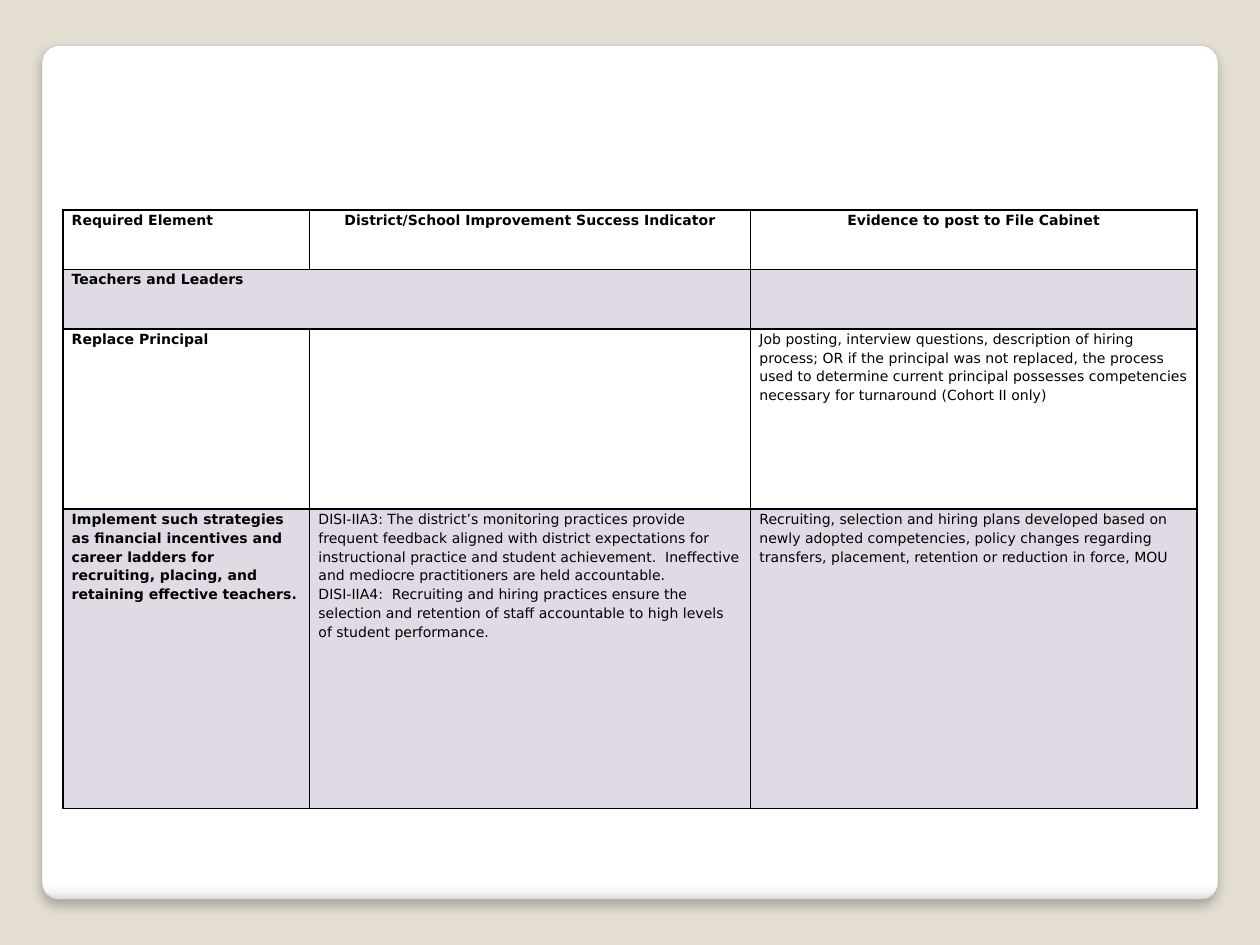
from lxml import etree
from pptx import Presentation
from pptx.dml.color import RGBColor
from pptx.enum import shapes, text
from pptx.oxml import parse_xml
from pptx.oxml.ns import nsdecls, qn
from pptx.util import Pt

FONT = "DejaVu Sans"
BLACK, TINT = "000000", "604878"
COLS = [141, 252, 255]
ROWS = [34, 34, 103, 171]
SHADED = (1, 3)
CELLS = [
    ["Required Element", "District/School Improvement Success Indicator",
     "Evidence to post to File Cabinet"],
    ["Teachers and Leaders", "", ""],
    ["Replace Principal", "",
     "Job posting, interview questions, description of hiring process; OR if the "
     "principal was not replaced, the process used to determine current principal "
     "possesses competencies necessary for turnaround (Cohort II only)"],
    ["Implement such strategies as financial incentives and career ladders for "
     "recruiting, placing, and retaining effective teachers.",
     "DISI-IIA3: The district’s monitoring practices provide frequent feedback "
     "aligned with district expectations for instructional practice and student "
     "achievement.  Ineffective and mediocre practitioners are held accountable.\n"
     "DISI-IIA4:  Recruiting and hiring practices ensure the selection and "
     "retention of staff accountable to high levels of student performance.",
     "Recruiting, selection and hiring plans developed based on newly adopted "
     "competencies, policy changes regarding transfers, placement, retention or "
     "reduction in force, MOU"],
]


def color(code):
    return RGBColor.from_string(code)


def style(item, values):
    for name, value in values.items():
        setattr(item, name, value)


def paint(fill, code, alpha=100):
    """Fill with one colour; alpha is the opacity in percent."""
    fill.solid()
    fill.fore_color.rgb = color(code)
    return alpha * 1000


def add_card(slide):
    """Rounded panel with a shaded bottom edge and a soft shadow."""
    card = slide.shapes.add_shape(shapes.MSO_SHAPE.ROUNDED_RECTANGLE,
                                  Pt(24), Pt(26), Pt(672), Pt(488))
    card.adjustments[0] = 0.02
    card.line.color.rgb = color("A4A4A4")
    card.line.width = Pt(0.16)
    stops = [(0, "FFFFFF"), (98, "FFFFFF"), (99, "F7F7F7"), (100, "DADADA")]
    marks = "".join(f'<a:gs pos="{pos * 1000}"><a:srgbClr val="{code}"/></a:gs>'
                    for pos, code in stops)
    props = card._element.spPr
    props.find(qn("a:prstGeom")).addnext(parse_xml(
        f'<a:gradFill {nsdecls("a")} rotWithShape="1"><a:gsLst>{marks}</a:gsLst>'
        '<a:lin ang="5400000" scaled="0"/></a:gradFill>'))
    props.append(parse_xml(
        f'<a:effectLst {nsdecls("a")}><a:outerShdw blurRad="{Pt(6)}" '
        f'dist="{Pt(4)}" dir="5400000" algn="ctr" rotWithShape="0">'
        f'<a:srgbClr val="{BLACK}"><a:alpha val="25000"/></a:srgbClr>'
        '</a:outerShdw></a:effectLst>'))


def shade(cell, code, alpha):
    opacity = paint(cell.fill, code, alpha)
    tone = cell._tc.tcPr.find(qn("a:solidFill"))[0]
    etree.SubElement(tone, qn("a:alpha")).set("val", str(opacity))


def frame(cell, code=BLACK, width=1):
    """Draw all four borders of a cell."""
    props = cell._tc.get_or_add_tcPr()
    for spot, side in enumerate("LRTB"):
        props.insert(spot, parse_xml(
            f'<a:ln{side} {nsdecls("a")} w="{Pt(width)}"><a:solidFill>'
            f'<a:srgbClr val="{code}"/></a:solidFill></a:ln{side}>'))


def write(cell, words, bold, align):
    style(cell, {"margin_left": Pt(5), "margin_right": Pt(5),
                 "margin_top": 0, "margin_bottom": 0})
    cell.text = words
    for para in cell.text_frame.paragraphs:
        style(para, {"alignment": align, "line_spacing": 1.15})
        style(para.font, {"name": FONT, "size": Pt(8), "bold": bold})
        para.font.color.rgb = color(BLACK)


def add_grid(slide):
    grid = slide.shapes.add_table(len(ROWS), len(COLS), Pt(36), Pt(120),
                                  Pt(sum(COLS)), Pt(sum(ROWS))).table
    style(grid, {"first_row": False, "horz_banding": False})
    for col, width in zip(grid.columns, COLS):
        col.width = Pt(width)
    for row, height in zip(grid.rows, ROWS):
        row.height = Pt(height)
    for r, line in enumerate(CELLS):
        for c, words in enumerate(line):
            cell = grid.cell(r, c)
            if words:
                mid = r == 0 and c > 0
                write(cell, words, r == 0 or c == 0,
                      text.PP_ALIGN.CENTER if mid else text.PP_ALIGN.LEFT)
            if r in SHADED:
                shade(cell, TINT, 20)
            else:
                cell.fill.background()
            frame(cell)
    grid.cell(1, 0).merge(grid.cell(1, 1))


def main():
    deck = Presentation()
    style(deck, {"slide_width": Pt(720), "slide_height": Pt(540)})
    slide = deck.slides.add_slide(deck.slide_layouts[6])
    paint(slide.background.fill, "E3DED1")
    add_card(slide)
    add_grid(slide)
    deck.save("out.pptx")


if __name__ == "__main__":
    main()
